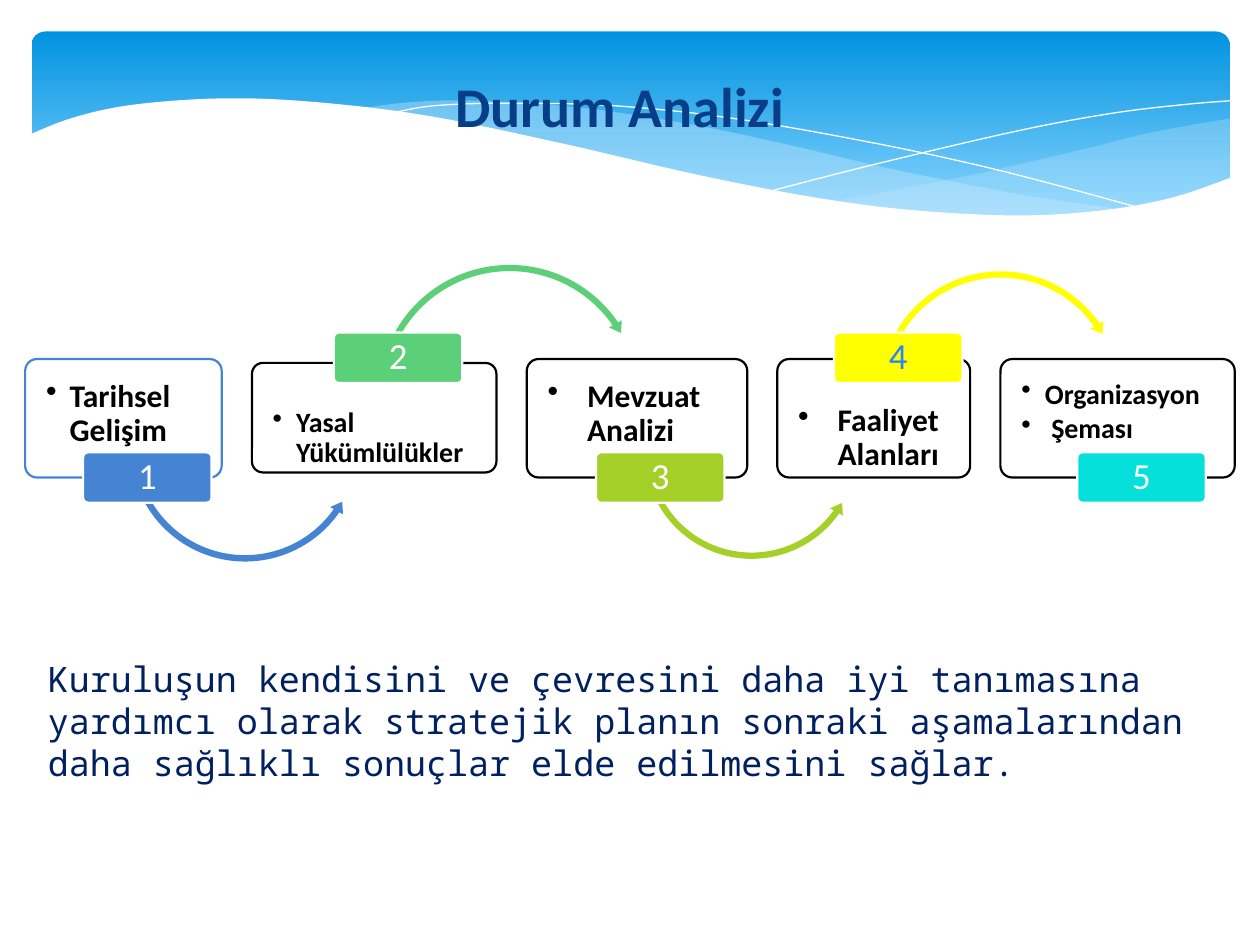
"""Build the situation analysis slide: a wave banner, five linked steps and a summary."""
from dataclasses import dataclass
from typing import Any, Optional

from lxml import etree
from pptx import Presentation
from pptx import util as u
from pptx.dml.color import RGBColor
from pptx.enum import shapes, text
from pptx.oxml import ns

COLORS = {
    "sky": "0293E0", "pale": "83D3FE", "mist": "C6E7FC", "white": "FFFFFF",
    "black": "000000", "title": "073E87", "navy": "002060", "blue": "4584D3",
    "green": "5BD078", "lime": "A5D028", "yellow": "FFFF00", "cyan": "05E0DB",
    "azure": "2D83F4",
}
TAG_W, TAG_H = 73.4, 28.8
TAG_Y = {True: 190.1, False: 258.5}
Points = list[tuple[float, float]]


@dataclass(frozen=True)
class Arc:
    left: float
    top: float
    size: float
    adj: tuple[float, ...]


@dataclass(frozen=True)
class Step:
    lines: tuple[str, ...]
    color: str
    card: tuple[float, float, float, float]
    tag_x: float
    size: int
    indent: float
    raised: bool = False
    border: str = "black"
    opacity: int = 100
    number: str = "white"
    arc: Optional[Arc] = None


@dataclass(frozen=True)
class Wave:
    knots: Points
    back: Points
    color: str = "mist"
    opacity: int = 100


STEPS = [
    Step(("Tarihsel Gelişim",), "blue", (14.4, 205.2, 112.3, 67.7), 47.5, 18, 13.5,
         border="blue", opacity=90,
         arc=Arc(72, 187.2, 136.1, (0.027, 3.231, 20.974, 90.233, 0.031))),
    Step(("Yasal Yükümlülükler",), "green", (144, 207.4, 139.7, 62.6), 190.8, 16, 13.5,
         raised=True, arc=Arc(213.8, 149, 154.8, (0.023, 2.826, 195.419, 125.755, 0.027))),
    Step(("Mevzuat Analizi",), "lime", (301, 205.2, 126, 67.7), 340.6, 18, 22.5,
         arc=Arc(365.8, 194.4, 127.4, (0.028, 3.472, 21.227, 90.245, 0.033))),
    Step(("Faaliyet Alanları",), "yellow", (444.2, 205.2, 110.2, 67.7), 476.6, 18, 22.5,
         raised=True, number="azure",
         arc=Arc(500.4, 152.6, 142.6, (0.025, 3.082, 195.163, 125.755, 0.03))),
    Step(("Organizasyon", " Şeması"), "cyan", (571.7, 205.2, 133.9, 67.7), 615.6, 16, 13.5),
]
BANDS = [
    Wave([(702.7, 67.7), (655.2, 76.3), (620.6, 85), (561.6, 98.6), (525.6, 105.8), (476.6, 115.2)],
         [(476.6, 115.2), (518, 120.2), (570.2, 123.8), (615.6, 122.8), (663.8, 115.2),
          (703.4, 102.2)], opacity=29),
    Wave([(643.7, 120.2), (582, 110.9), (509, 96.5), (453.6, 83.5), (399.6, 72),
          (334.8, 61.9), (273.6, 57.6), (236.2, 58.3), (206.6, 61.9)],
         [(206.6, 61.9), (261.4, 69.8), (324, 83.5), (408.2, 103), (468.7, 113.8),
          (530.6, 121.7), (589.7, 124.6), (643.7, 120.2)], opacity=40),
]
STRANDS = [
    [(223.2, 64.8), (247.7, 60.5), (289.4, 59), (351.4, 60.5), (419, 67.7),
     (501.1, 82.1), (573.1, 97.9), (653.8, 119.5)],
    [(442.1, 108.7), (501.1, 93.6), (581, 74.9), (635, 64.8), (676.1, 59.8), (702.7, 57.6)],
]
FOREGROUND = Wave(
    [(16.6, 77), (42.5, 67), (76.3, 59.8), (127.4, 56.2), (180, 58.3), (244.8, 66.2),
     (321.8, 82.1), (399.6, 100.1), (466.6, 113), (522.7, 120.2), (582.5, 123.1),
     (630, 120.2), (669.6, 113), (703.4, 101.5)],
    [(703.4, 161.3), (16.6, 161.3)], "white")


def rgb(name: str) -> RGBColor:
    """Return the named colour."""
    return RGBColor.from_string(COLORS[name])


def apply(obj: Any, values: dict[str, Any]) -> None:
    """Set each attribute in values on obj."""
    for name, value in values.items():
        setattr(obj, name, value)


def paint(sp: Any, fill: Optional[str], line: Optional[str] = None,
          width: float = 1.25, opacity: int = 100) -> None:
    """Give a shape its fill and line and remove its shadow."""
    sp.shadow.inherit = False
    if fill:
        sp.fill.solid()
        sp.fill.fore_color.rgb = rgb(fill)
        if opacity < 100:
            color = sp.fill._xPr.find(".//" + ns.qn("a:srgbClr"))
            etree.SubElement(color, ns.qn("a:alpha"), val=str(opacity * 1000))
    else:
        sp.fill.background()
    if line:
        sp.line.color.rgb = rgb(line)
        sp.line.width = u.Pt(width)
    else:
        sp.line.fill.background()


def smooth(knots: Points, steps: int = 6) -> Points:
    """Return points on a Catmull-Rom curve through the knots."""
    ext = [knots[0], *knots, knots[-1]]
    curve = [knots[0]]
    for a, b, c, d in zip(ext, ext[1:], ext[2:], ext[3:]):
        for t in (i / steps for i in range(1, steps + 1)):
            curve.append(tuple(
                (2 * q + (r - p) * t + (2 * p - 5 * q + 4 * r - s) * t**2
                 + (3 * q - p - 3 * r + s) * t**3) / 2
                for p, q, r, s in zip(a, b, c, d)))
    return curve


def add_outline(sl: Any, points: Points, close: bool) -> Any:
    """Add a freeform through the points."""
    vertices = [(u.Pt(x), u.Pt(y)) for x, y in points]
    fb = sl.shapes.build_freeform(*vertices[0])
    fb.add_line_segments(vertices[1:], close=close)
    return fb.convert_to_shape()


def add_preset(sl: Any, kind: Any, box: tuple[float, ...], adj: tuple[float, ...]) -> Any:
    """Add a preset shape with its adjustments."""
    sp = sl.shapes.add_shape(kind, *map(u.Pt, box))
    for i, value in enumerate(adj):
        sp.adjustments[i] = value
    return sp


def write(sp: Any, lines: tuple[str, ...], font: dict[str, Any], color: str,
          frame: dict[str, Any], para: dict[str, Any], indent: float = 0) -> None:
    """Write one paragraph per line, bulleted when an indent is given."""
    tf = sp.text_frame
    apply(tf, {"word_wrap": True, **frame})
    for i, line in enumerate(lines):
        p = tf.add_paragraph() if i else tf.paragraphs[0]
        apply(p, para)
        r = p.add_run()
        r.text = line
        apply(r.font, font)
        r.font.color.rgb = rgb(color)
        if indent:
            pPr = p._p.get_or_add_pPr()
            pPr.set("marL", str(u.Pt(indent)))
            pPr.set("indent", str(-u.Pt(indent)))
            etree.SubElement(pPr, ns.qn("a:buChar"), char="•")


def add_banner(sl: Any) -> None:
    """Draw the gradient banner and its waves."""
    sp = add_preset(sl, shapes.MSO_SHAPE.ROUNDED_RECTANGLE, (18, 18, 684.7, 112.3), (0.071,))
    paint(sp, None)
    sp.fill.gradient()
    sp.fill.gradient_angle = 270
    for stop, name, position in zip(sp.fill.gradient_stops, ("sky", "pale"), (0, 0.9)):
        stop.color.rgb = rgb(name)
        stop.position = position
    for band in BANDS:
        sp = add_outline(sl, smooth(band.knots) + smooth(band.back), True)
        paint(sp, band.color, opacity=band.opacity)
    for knots in STRANDS:
        paint(add_outline(sl, smooth(knots), False), None, "white", 0)
    paint(add_outline(sl, smooth(FOREGROUND.knots) + FOREGROUND.back, True), FOREGROUND.color)


def add_step(sl: Any, number: int, step: Step) -> None:
    """Draw a step's card, its arrow and its numbered tag."""
    kinds = shapes.MSO_SHAPE
    sp = add_preset(sl, kinds.ROUNDED_RECTANGLE, step.card, (0.1,))
    paint(sp, "white", step.border, opacity=step.opacity)
    sides = dict.fromkeys(("margin_left", "margin_right", "margin_bottom"), u.Pt(10))
    write(sp, step.lines, {"name": "Calibri", "size": u.Pt(step.size), "bold": True}, "black",
          {**sides, "margin_top": u.Pt(24 if step.raised else 10),
           "vertical_anchor": text.MSO_ANCHOR.TOP},
          {"alignment": text.PP_ALIGN.LEFT, "line_spacing": 0.9, "space_after": u.Pt(2.4)},
          step.indent)
    if step.arc:
        arc = step.arc
        kind = kinds.CIRCULAR_ARROW if step.raised else kinds.LEFT_CIRCULAR_ARROW
        paint(add_preset(sl, kind, (arc.left, arc.top, arc.size, arc.size), arc.adj), step.color)
    box = (step.tag_x, TAG_Y[step.raised], TAG_W, TAG_H)
    sp = add_preset(sl, kinds.ROUNDED_RECTANGLE, box, (0.1,))
    paint(sp, step.color, "white")
    write(sp, (str(number),), {"name": "Calibri", "size": u.Pt(21)}, step.number,
          {"margin_top": u.Pt(2), "margin_bottom": u.Pt(2),
           "vertical_anchor": text.MSO_ANCHOR.MIDDLE},
          {"alignment": text.PP_ALIGN.CENTER, "line_spacing": 0.9})


def main() -> None:
    """Build and save the slide."""
    prs = Presentation()
    apply(prs, {"slide_width": u.Pt(720), "slide_height": u.Pt(540)})
    sl = prs.slides.add_slide(prs.slide_layouts[6])
    add_banner(sl)
    write(sl.shapes.add_textbox(*map(u.Pt, (20.2, 372.2, 680.4, 88.6))),
          ("Kuruluşun kendisini ve çevresini daha iyi tanımasına yardımcı olarak stratejik "
           "planın sonraki aşamalarından daha sağlıklı sonuçlar elde edilmesini sağlar.",),
          {"name": "Noto Sans Mono", "size": u.Pt(20)}, "navy", {}, {"space_after": u.Pt(6)})
    write(sl.shapes.add_textbox(*map(u.Pt, (36.7, 37.4, 635, 45.4))), ("Durum Analizi",),
          {"name": "Calibri", "size": u.Pt(32), "bold": True}, "title",
          {"vertical_anchor": text.MSO_ANCHOR.BOTTOM}, {"alignment": text.PP_ALIGN.CENTER})
    for number, step in enumerate(STEPS, 1):
        add_step(sl, number, step)
    prs.save("out.pptx")


if __name__ == "__main__":
    main()
